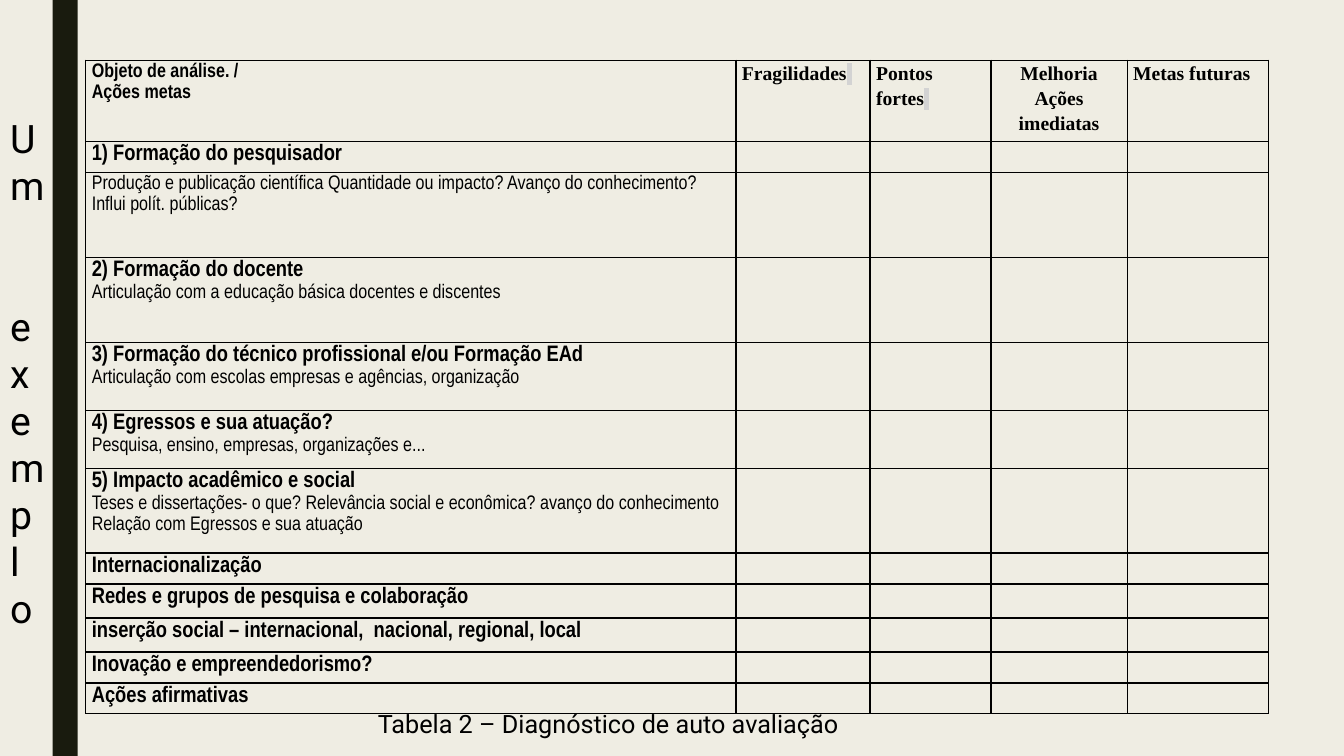
from lxml.etree import SubElement
from pptx import Presentation
from pptx.dml.color import RGBColor
from pptx.enum.shapes import MSO_SHAPE
from pptx.enum.text import MSO_ANCHOR, MSO_AUTO_SIZE, PP_ALIGN
from pptx.oxml import parse_xml
from pptx.oxml.ns import nsdecls, qn
from pptx.util import Pt

PAPER = RGBColor(0xEF, 0xED, 0xE3)
DARK = RGBColor(0x19, 0x1B, 0x0E)
BLACK = RGBColor(0, 0, 0)
MARKER = RGBColor(0xD3, 0xD3, 0xD3)

SANS, NARROW, SERIF = "Roboto", "Arial Narrow", "Times New Roman"
COLUMN_WIDTHS = [464.4, 95.8, 86.4, 97.2, 100.8]
HEADER_HEIGHT = 57.9
FIRST_HEADER = ["Objeto de análise. /", "Ações metas"]
# Text, alignment, whether a marked space follows
HEADERS = [
    ("Fragilidades", PP_ALIGN.LEFT, True),
    ("Pontos fortes", PP_ALIGN.LEFT, True),
    ("Melhoria Ações imediatas", PP_ALIGN.CENTER, False),
    ("Metas futuras", PP_ALIGN.LEFT, False),
]
# Row height, bold heading, plain details
TOPICS = [
    (22.1, "1) Formação do pesquisador", []),
    (60.7, None, ["Produção e publicação científica Quantidade ou impacto? "
                  "Avanço do conhecimento? Influi polít. públicas?"]),
    (60.7, "2) Formação do docente",
     ["Articulação com a educação básica docentes e discentes"]),
    (48.6, "3) Formação do técnico profissional e/ou Formação EAd",
     ["Articulação com escolas empresas e agências, organização"]),
    (41.4, "4) Egressos e sua atuação?",
     ["Pesquisa, ensino, empresas, organizações e..."]),
    (60.2, "5) Impacto acadêmico e social",
     ["Teses e dissertações- o que? Relevância social e econômica? "
      "avanço do conhecimento", "Relação com Egressos e sua atuação"]),
    (22.1, "Internacionalização", []),
    (24.3, "Redes e grupos de pesquisa e colaboração", []),
    (24.3, "inserção social – internacional,  nacional, regional, local", []),
    (22.1, "Inovação e empreendedorismo?", []),
    (22.1, "Ações afirmativas", []),
]


def place(shape, left, top, width, height):
    shape.left, shape.top = Pt(left), Pt(top)
    shape.width, shape.height = Pt(width), Pt(height)


def add_run(para, text, font, size, bold=False):
    run = para.add_run()
    run.text = text
    run.font.name, run.font.size, run.font.bold = font, Pt(size), bold
    run.font.color.rgb = BLACK
    return run


def mark(run):
    """Give a run a grey highlight."""
    highlight = parse_xml(f'<a:highlight {nsdecls("a")}>'
                          f'<a:srgbClr val="{MARKER}"/></a:highlight>')
    run.font.fill._xPr.find(qn("a:solidFill")).addnext(highlight)


def write_cell(cell, lines, align=PP_ALIGN.LEFT):
    """Write one paragraph per (text, font, size, bold) line."""
    for index, line in enumerate(lines):
        frame = cell.text_frame
        para = frame.paragraphs[0] if index == 0 else frame.add_paragraph()
        para.alignment, para.line_spacing = align, 1.15
        add_run(para, *line)


def format_cell(cell):
    """Clear the fill, set the margins and rule all four sides."""
    cell.margin_left = cell.margin_right = Pt(4.3)
    cell.margin_top = cell.margin_bottom = Pt(0)
    properties = cell._tc.get_or_add_tcPr()
    for side in ("lnL", "lnR", "lnT", "lnB"):
        line = SubElement(properties, qn(f"a:{side}"), w=str(Pt(1)))
        fill = SubElement(line, qn("a:solidFill"))
        SubElement(fill, qn("a:srgbClr"), val=str(BLACK))
    cell.fill.background()


def add_side_bar(slide, left, top, width, height):
    bar = slide.shapes.add_shape(MSO_SHAPE.RECTANGLE, Pt(left), Pt(top),
                                 Pt(width), Pt(height))
    bar.shadow.inherit = False
    bar.fill.solid()
    bar.fill.fore_color.rgb = DARK
    bar.line.fill.background()


def set_title(slide, left, top, width, height):
    """Set the title in a box so narrow that every letter takes a line."""
    title = slide.shapes.title
    place(title, left, top, width, height)
    frame = title.text_frame
    frame.word_wrap, frame.auto_size = True, MSO_AUTO_SIZE.NONE
    frame.vertical_anchor = MSO_ANCHOR.TOP
    first, second = frame.paragraphs[0], frame.add_paragraph()
    for para, word in ((first, "Um"), (second, "exemplo")):
        para.alignment = PP_ALIGN.LEFT
        add_run(para, word, SANS, 28)
    second.space_before = Pt(67)


def add_diagnosis_table(slide, left, top):
    heights = [HEADER_HEIGHT] + [topic[0] for topic in TOPICS]
    frame = slide.shapes.add_table(
        len(heights), len(COLUMN_WIDTHS), Pt(left), Pt(top),
        Pt(sum(COLUMN_WIDTHS)), Pt(sum(heights)))
    table = frame.table
    table.first_row = table.horz_banding = False
    for column, width in zip(table.columns, COLUMN_WIDTHS):
        column.width = Pt(width)
    for row, height in zip(table.rows, heights):
        row.height = Pt(height)
    for cell in table.iter_cells():
        format_cell(cell)

    write_cell(table.cell(0, 0),
               [(text, NARROW, 14, True) for text in FIRST_HEADER])
    for column, (text, align, marked) in enumerate(HEADERS, 1):
        cell = table.cell(0, column)
        write_cell(cell, [(text, SERIF, 14, True)], align)
        if marked:
            mark(add_run(cell.text_frame.paragraphs[0], " ", SERIF, 14, True))
    for row, (_, heading, details) in enumerate(TOPICS, 1):
        lines = [(heading, NARROW, 16, True)] if heading else []
        lines += [(text, NARROW, 14, False) for text in details]
        write_cell(table.cell(row, 0), lines)


def add_caption(slide, left, top, width, height):
    box = slide.shapes.add_textbox(Pt(left), Pt(top), Pt(width), Pt(height))
    box.text_frame.word_wrap = True
    add_run(box.text_frame.paragraphs[0],
            "Tabela 2 – Diagnóstico de auto avaliação", SANS, 18)


def build_diagnosis_slide(deck):
    slide = deck.slides.add_slide(deck.slide_layouts[5])
    slide.background.fill.solid()
    slide.background.fill.fore_color.rgb = PAPER
    add_side_bar(slide, 37.5, 0, 18, 540)
    set_title(slide, 0, 77.8, 20.2, 346.3)
    add_caption(slide, 262.8, 502.6, 661.7, 28.8)
    add_diagnosis_table(slide, 61.3, 43)


def main():
    deck = Presentation()
    deck.slide_width, deck.slide_height = Pt(960), Pt(540)
    build_diagnosis_slide(deck)
    deck.save("out.pptx")


if __name__ == "__main__":
    main()
